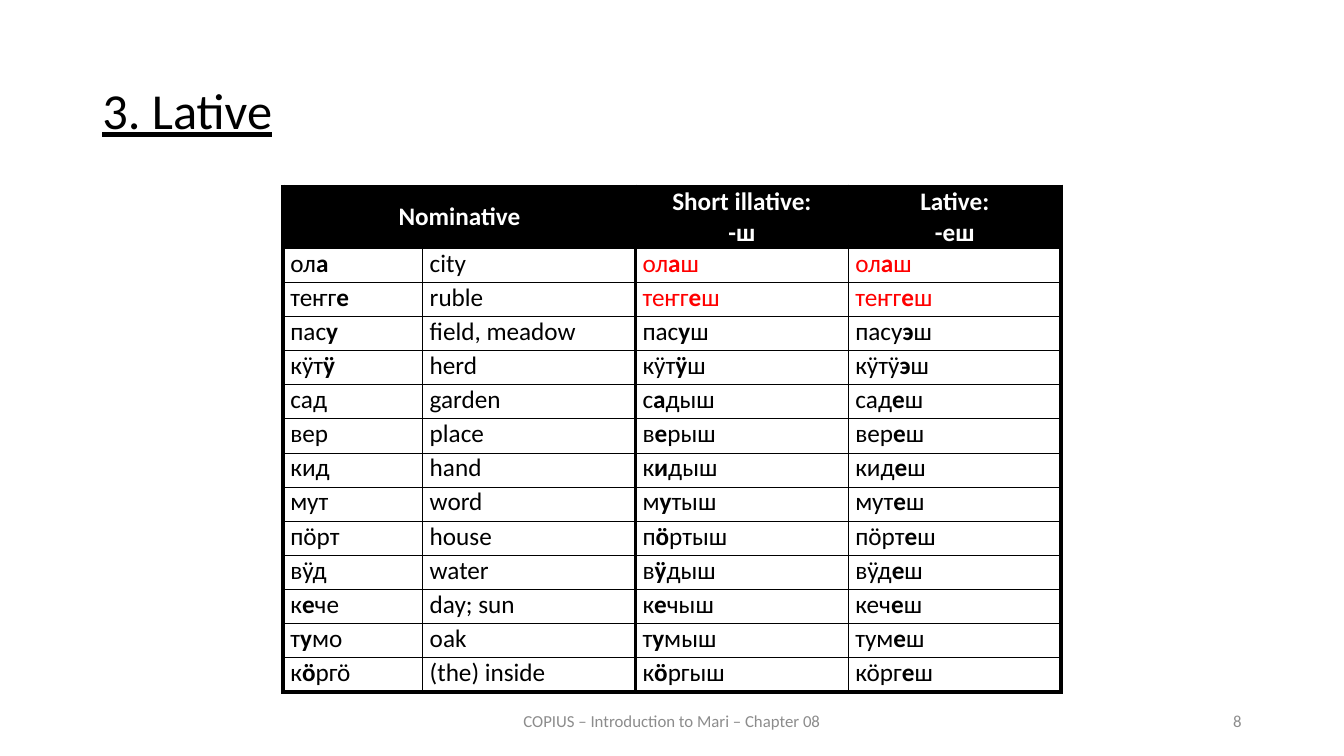
import pptx
import pptx.util
import pptx.dml.color
import pptx.enum.text
import pptx.oxml
import pptx.oxml.ns

Pt = pptx.util.Pt
Align = pptx.enum.text.PP_ALIGN
Anchor = pptx.enum.text.MSO_ANCHOR
COLORS = {"ink": "000000", "paper": "FFFFFF", "mark": "FF0000", "foot": "8C8C8C"}

# Table content: letters between asterisks are bold
HEADS = ["Nominative", None, "Short illative:\n-ш", "Lative:\n-еш"]
WORDS = [
    ["ол*а*", "city", "ол*а*ш", "ол*а*ш"],
    ["теҥг*е*", "ruble", "теҥг*е*ш", "теҥг*е*ш"],
    ["пас*у*", "field, meadow", "пас*у*ш", "пасу*э*ш"],
    ["кӱт*ӱ*", "herd", "кӱт*ӱ*ш", "кӱтӱ*э*ш"],
    ["сад", "garden", "с*а*дыш", "сад*е*ш"],
    ["вер", "place", "в*е*рыш", "вер*е*ш"],
    ["кид", "hand", "к*и*дыш", "кид*е*ш"],
    ["мут", "word", "м*у*тыш", "мут*е*ш"],
    ["пӧрт", "house", "п*ӧ*ртыш", "пӧрт*е*ш"],
    ["вӱд", "water", "в*ӱ*дыш", "вӱд*е*ш"],
    ["к*е*че", "day; sun", "к*е*чыш", "кеч*е*ш"],
    ["т*у*мо", "oak", "т*у*мыш", "тум*е*ш"],
    ["к*ӧ*ргӧ", "(the) inside", "к*ӧ*ргыш", "кӧрг*е*ш"],
]
WIDTHS = [99.6, 152, 152, 152]
HEAD, ROW = 44, 24.4


def rgb(name):
    return pptx.dml.color.RGBColor.from_string(COLORS[name])


def put(obj, **values):
    for key, value in values.items():
        setattr(obj, key, value)


def write(frame, text, size, color, align, bold=False, line=False):
    for i, part in enumerate(text.split("\n")):
        para = frame.paragraphs[0] if i == 0 else frame.add_paragraph()
        para.alignment = align
        for j, bit in enumerate(part.split("*")):
            if bit:
                run = para.add_run()
                run.text = bit
                put(run.font, name="Calibri", size=Pt(size),
                    bold=bold or j % 2 == 1, underline=line)
                run.font.color.rgb = rgb(color)


def label(slide, box, text, size, color, align, line=False):
    frame = slide.shapes.add_textbox(*map(Pt, box)).text_frame
    put(frame, word_wrap=True, vertical_anchor=Anchor.MIDDLE)
    write(frame, text, size, color, align, line=line)
    return frame


def edge(cell, row, col):
    # Thick lines frame each pair of columns
    thick = {"L": col % 2 == 0, "R": col % 2 == 1 or row == col == 0,
             "T": row == 0, "B": row == len(WORDS)}
    props = cell._tc.get_or_add_tcPr()
    for side, heavy in thick.items():
        props.append(pptx.oxml.parse_xml(
            f'<a:ln{side} {pptx.oxml.ns.nsdecls("a")} w="{Pt(3 if heavy else 0.5)}">'
            f'<a:solidFill><a:srgbClr val="{COLORS["ink"]}"/></a:solidFill></a:ln{side}>'))


def grid(slide):
    rows = [HEADS] + WORDS
    high = HEAD + ROW * len(WORDS)
    table = slide.shapes.add_table(
        len(rows), len(WIDTHS), Pt(202.4), Pt(133.2), Pt(sum(WIDTHS)), Pt(high)).table
    put(table, first_row=False, horz_banding=False)
    for col, width in zip(table.columns, WIDTHS):
        col.width = Pt(width)
    for r, texts in enumerate(rows):
        table.rows[r].height = Pt(ROW if r else HEAD)
        for c, text in enumerate(texts):
            cell = table.cell(r, c)
            put(cell, margin_left=Pt(5), margin_right=Pt(5), margin_top=0,
                margin_bottom=0, vertical_anchor=Anchor.TOP if r else Anchor.MIDDLE)
            edge(cell, r, c)
            cell.fill.solid()
            cell.fill.fore_color.rgb = rgb("paper" if r else "ink")
            if r == 0 and text:
                write(cell.text_frame, text, 18, "paper", Align.CENTER, bold=True)
            elif text:
                color = "mark" if r < 3 and c > 1 else "ink"
                write(cell.text_frame, text, 18, color, Align.JUSTIFY)
    table.cell(0, 0).merge(table.cell(0, 1))


def main():
    deck = pptx.Presentation()
    put(deck, slide_width=Pt(960), slide_height=Pt(540))
    slide = deck.slides.add_slide(deck.slide_layouts[6])
    # Table
    grid(slide)
    # Footer and page number
    label(slide, (318, 500.5, 324, 28.75), "COPIUS – Introduction to Mari – Chapter 08",
          12, "foot", Align.CENTER)
    label(slide, (678, 500.5, 216, 28.75), "8", 12, "foot", Align.RIGHT)
    # Title
    title = label(slide, (66, 28.75, 828, 104.4), "3. Lative", 36, "ink",
                  Align.LEFT, line=True)
    title.paragraphs[0].line_spacing = 0.9
    deck.save("out.pptx")


if __name__ == "__main__":
    main()
